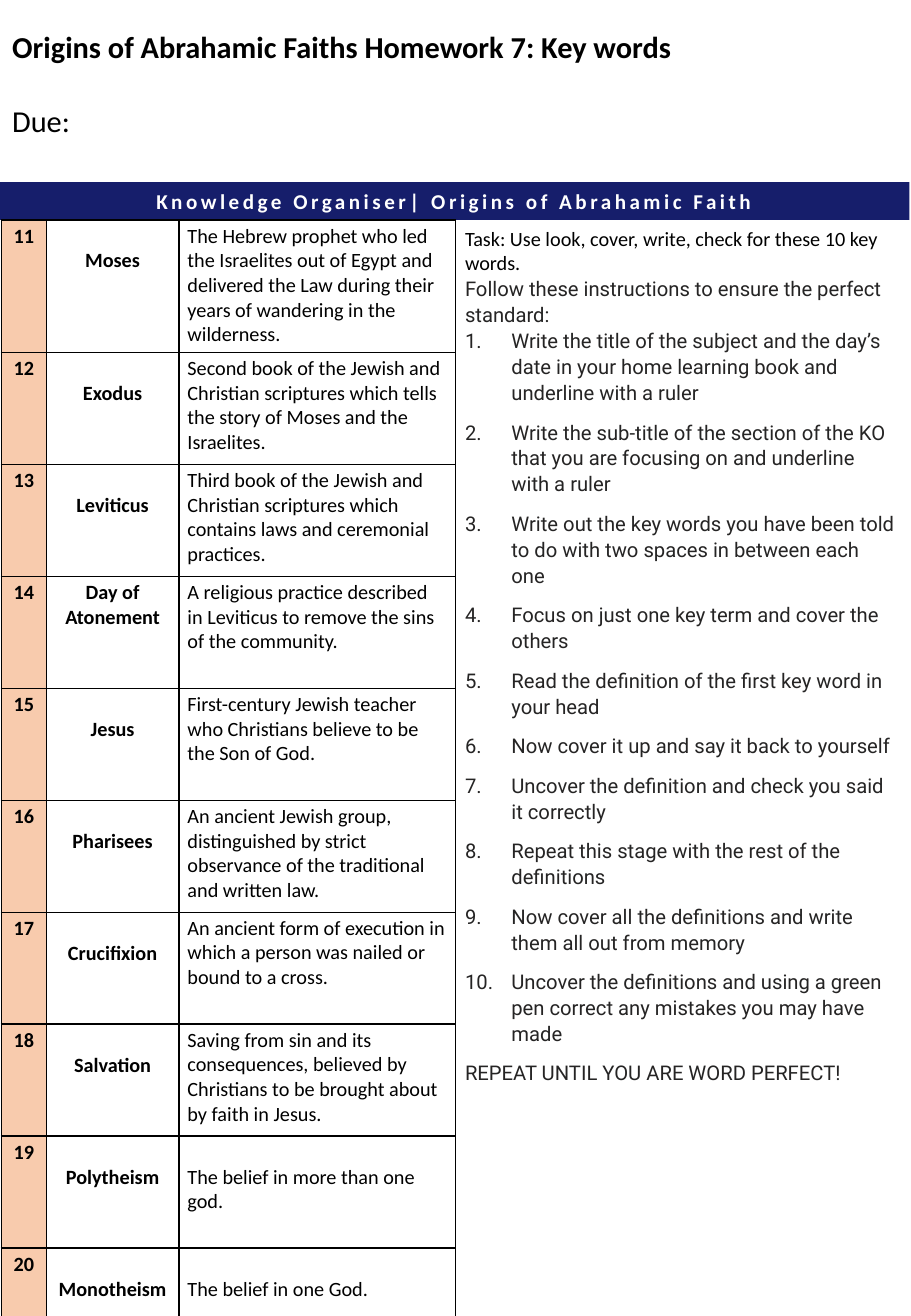
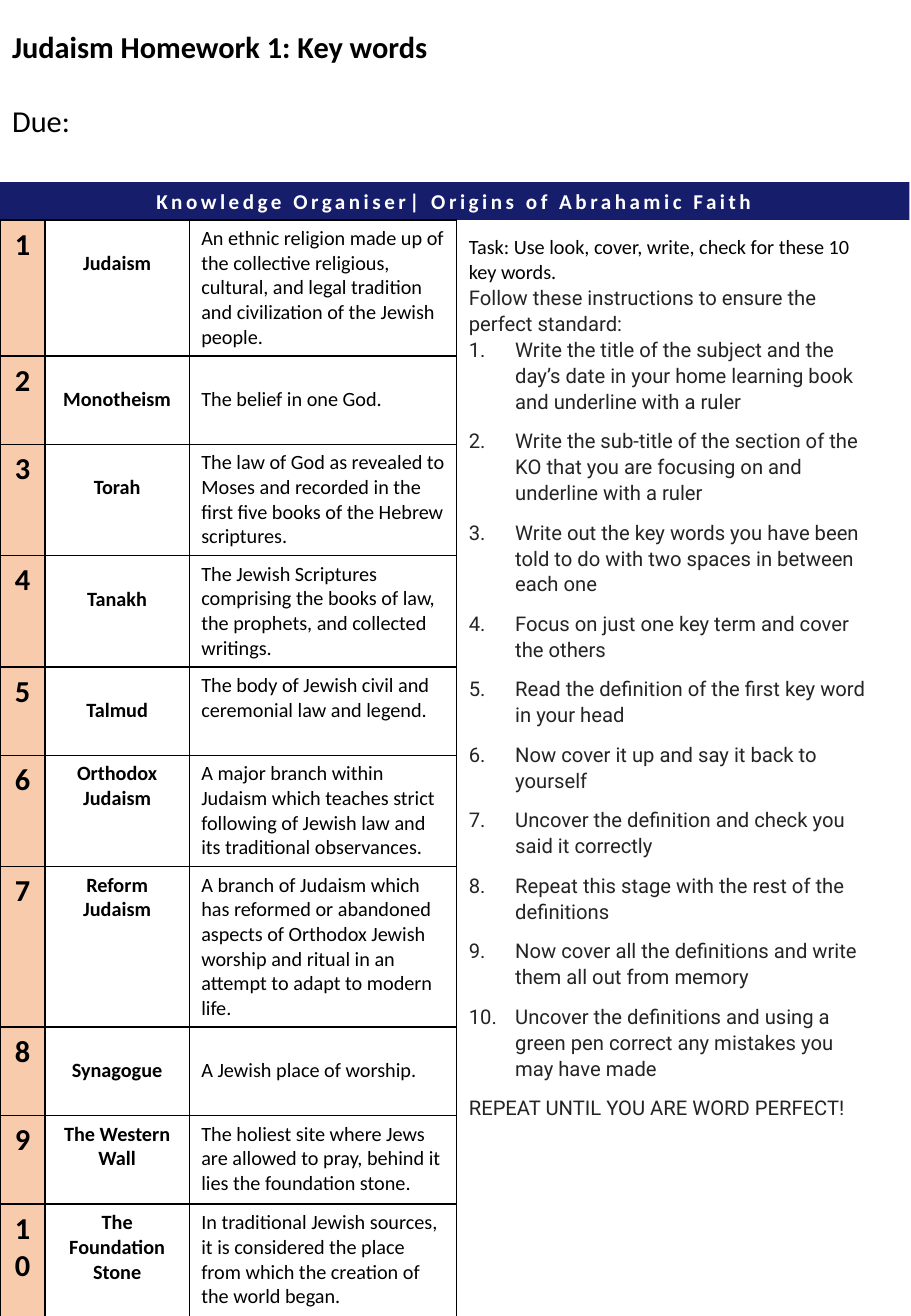
"""Build two key word homework sheets."""
from dataclasses import dataclass

from lxml import etree
from pptx import Presentation
from pptx import util as u
from pptx.dml.color import RGBColor
from pptx.enum import shapes, text
from pptx.oxml.ns import qn

LEFT, MID = text.PP_ALIGN.LEFT, text.PP_ALIGN.CENTER


@dataclass(frozen=True)
class Theme:
    ink: str = "000000"
    soft: str = "252424"
    navy: str = "161E6B"
    white: str = "FFFFFF"
    peach: str = "F8CBAD"
    font: str = "Calibri"
    alt: str = "Roboto"
    head: float = 18
    bar: float = 12.5
    body: float = 12
    line: float = 1


THEME = Theme()


def write(para, words, size=THEME.body, color=THEME.ink, font=THEME.font, bold=False,
          align=LEFT, space=None, before=0, after=0, lead=None):
    para.alignment = align
    para.space_before, para.space_after = u.Pt(before), u.Pt(after)
    if lead:
        para.line_spacing = lead
    run = para.add_run()
    run.text = words
    run.font.name, run.font.size, run.font.bold = font, u.Pt(size), bold
    run.font.color.rgb = RGBColor.from_string(color)
    if space:
        run.font._element.set("spc", str(space))


def mark(para, hang=0):
    props = para._p.get_or_add_pPr()
    props.set("marL", str(u.Cm(hang)))
    props.set("indent", str(-u.Cm(hang)))
    if hang:
        etree.SubElement(props, qn("a:buAutoNum"), type="arabicPeriod")
    else:
        etree.SubElement(props, qn("a:buNone"))


def edge(cell, color, width):
    props = cell._tc.get_or_add_tcPr()
    for side in ("lnL", "lnR", "lnT", "lnB"):
        line = etree.SubElement(props, qn("a:" + side), w=str(u.Pt(width)))
        fill = etree.SubElement(line, qn("a:solidFill"))
        etree.SubElement(fill, qn("a:srgbClr"), val=color)


class Sheet:
    """Hold the theme and the current slide, and draw each part of it."""

    def __init__(self, deck, theme):
        self.deck, self.theme, self.slide = deck, theme, None

    def start(self):
        self.slide = self.deck.slides.add_slide(self.deck.slide_layouts[1])

    def place(self, shape, box):
        shape.left, shape.top, shape.width, shape.height = map(u.Cm, box)
        frame = shape.text_frame
        frame.word_wrap = True
        frame.auto_size = text.MSO_AUTO_SIZE.NONE
        frame.vertical_anchor = text.MSO_ANCHOR.TOP
        return frame

    def title(self, words):
        t = self.theme
        frame = self.place(self.slide.shapes.title, (0, 0.46, 15.52, 2.57))
        write(frame.paragraphs[0], words, size=t.head, bold=True)
        write(frame.add_paragraph(), "Due:", size=t.head, before=22)

    def band(self, words):
        t = self.theme
        bar = self.slide.shapes.add_shape(
            shapes.MSO_SHAPE.RECTANGLE, *map(u.Cm, (-0.03, 3.81, 19.05, 0.79)))
        bar.shadow.inherit = False
        bar.fill.solid()
        bar.fill.fore_color.rgb = RGBColor.from_string(t.navy)
        bar.line.fill.background()
        frame = bar.text_frame
        frame.word_wrap = True
        frame.vertical_anchor = text.MSO_ANCHOR.MIDDLE
        write(frame.paragraphs[0], words, size=t.bar, color=t.white, bold=True,
              align=MID, space=210)

    def list(self, box, task, lead, steps, close):
        t = self.theme
        frame = self.place(self.slide.placeholders[1], box)
        first = frame.paragraphs[0]
        write(first, task)
        mark(first)
        rows = [(lead, 0, 0), *((step, 8, 0.97) for step in steps), (close, 0, 0)]
        for words, after, hang in rows:
            para = frame.add_paragraph()
            write(para, words, color=t.soft, font=t.alt, after=after, lead=1.07)
            mark(para, hang)

    def table(self, left, cols, rows, first, size, pad, terms):
        t = self.theme
        grid = self.slide.shapes.add_table(
            len(terms), len(cols), *map(u.Cm, (left, 4.6, sum(cols), sum(rows)))).table
        grid.first_row = grid.horz_banding = False
        for col, width in zip(grid.columns, cols):
            col.width = u.Cm(width)
        for num, (row, high, (term, sense)) in enumerate(zip(grid.rows, rows, terms), first):
            row.height = u.Cm(high)
            parts = (
                (str(num), False, dict(size=size, bold=True, align=MID)),
                (term, " " not in term, dict(bold=True, align=MID)),
                (sense, len(sense) < 40, {}),
            )
            for cell, (words, drop, look) in zip(row.cells, parts):
                self.cell(cell, words, drop, pad, look)
            num_fill = row.cells[0].fill
            num_fill.solid()
            num_fill.fore_color.rgb = RGBColor.from_string(t.peach)

    def cell(self, cell, words, drop, pad, look):
        side, top = pad
        cell.margin_left = cell.margin_right = u.Cm(side)
        cell.margin_top = u.Cm(top + (0.52 if drop else 0))
        cell.margin_bottom = u.Cm(top)
        edge(cell, self.theme.ink, self.theme.line)
        cell.fill.background()
        write(cell.text_frame.paragraphs[0], words, **look)


BAND = "Knowledge Organiser| Origins of Abrahamic Faith"
TASK = "Task: Use look, cover, write, check for these 10 key words."
LEAD = "Follow these instructions to ensure the perfect standard:"
STEPS = (
    "Write the title of the subject and the day’s date in your home learning book and underline with a ruler",
    "Write the sub-title of the section of the KO that you are focusing on and underline with a ruler",
    "Write out the key words you have been told to do with two spaces in between each one",
    "Focus on just one key term and cover the others",
    "Read the definition of the first key word in your head",
    "Now cover it up and say it back to yourself",
    "Uncover the definition and check you said it correctly",
    "Repeat this stage with the rest of the definitions",
    "Now cover all the definitions and write them all out from memory",
    "Uncover the definitions and using a green pen correct any mistakes you may have made",
)
CLOSE = "REPEAT UNTIL YOU ARE WORD PERFECT!"

FAITHS = (
    ("Moses", "The Hebrew prophet who led the Israelites out of Egypt and delivered the Law during their years of wandering in the wilderness."),
    ("Exodus", "Second book of the Jewish and Christian scriptures which tells the story of Moses and the Israelites."),
    ("Leviticus", "Third book of the Jewish and Christian scriptures which contains laws and ceremonial practices."),
    ("Day of Atonement", "A religious practice described in Leviticus to remove the sins of the community."),
    ("Jesus", "First-century Jewish teacher who Christians believe to be the Son of God."),
    ("Pharisees", "An ancient Jewish group, distinguished by strict observance of the traditional and written law."),
    ("Crucifixion", "An ancient form of execution in which a person was nailed or bound to a cross."),
    ("Salvation", "Saving from sin and its consequences, believed by Christians to be brought about by faith in Jesus."),
    ("Polytheism", "The belief in more than one god."),
    ("Monotheism", "The belief in one God."),
)
JUDAISM = (
    ("Judaism", "An ethnic religion made up of the collective religious, cultural, and legal tradition and civilization of the Jewish people."),
    ("Monotheism", "The belief in one God."),
    ("Torah", "The law of God as revealed to Moses and recorded in the first five books of the Hebrew scriptures."),
    ("Tanakh", "The Jewish Scriptures comprising the books of law, the prophets, and collected writings."),
    ("Talmud", "The body of Jewish civil and ceremonial law and legend."),
    ("Orthodox Judaism", "A major branch within Judaism which teaches strict following of Jewish law and its traditional observances."),
    ("Reform Judaism", "A branch of Judaism which has reformed or abandoned aspects of Orthodox Jewish worship and ritual in an attempt to adapt to modern life."),
    ("Synagogue", "A Jewish place of worship."),
    ("The Western Wall", "The holiest site where Jews are allowed to pray, behind it lies the foundation stone."),
    ("The Foundation Stone", "In traditional Jewish sources, it is considered the place from which the creation of the world began."),
)
PAGES = (
    ("Origins of Abrahamic Faiths Homework 7: Key words", (9.47, 4.6, 9.53, 18.92),
     dict(left=0.03, cols=(0.94, 2.77, 5.79), rows=[2.77] + [2.34] * 8 + [1.5],
          first=11, size=THEME.body, pad=(0.18, 0.08), terms=FAITHS)),
    ("Judaism Homework 1: Key words", (9.55, 4.78, 8.97, 19.46),
     dict(left=0, cols=(0.94, 3.02, 5.59), rows=[2.36] + [1.85] * 5 + [2.9] + [1.85] * 2 + [2.36],
          first=1, size=THEME.head, pad=(0.25, 0.13), terms=JUDAISM)),
)


def main():
    deck = Presentation()
    deck.slide_width, deck.slide_height = u.Cm(19.05), u.Cm(27.51)
    sheet = Sheet(deck, THEME)
    for name, box, grid in PAGES:
        sheet.start()
        sheet.title(name)
        sheet.band(BAND)
        sheet.table(**grid)
        sheet.list(box, TASK, LEAD, STEPS, CLOSE)
    deck.save("out.pptx")


if __name__ == "__main__":
    main()
